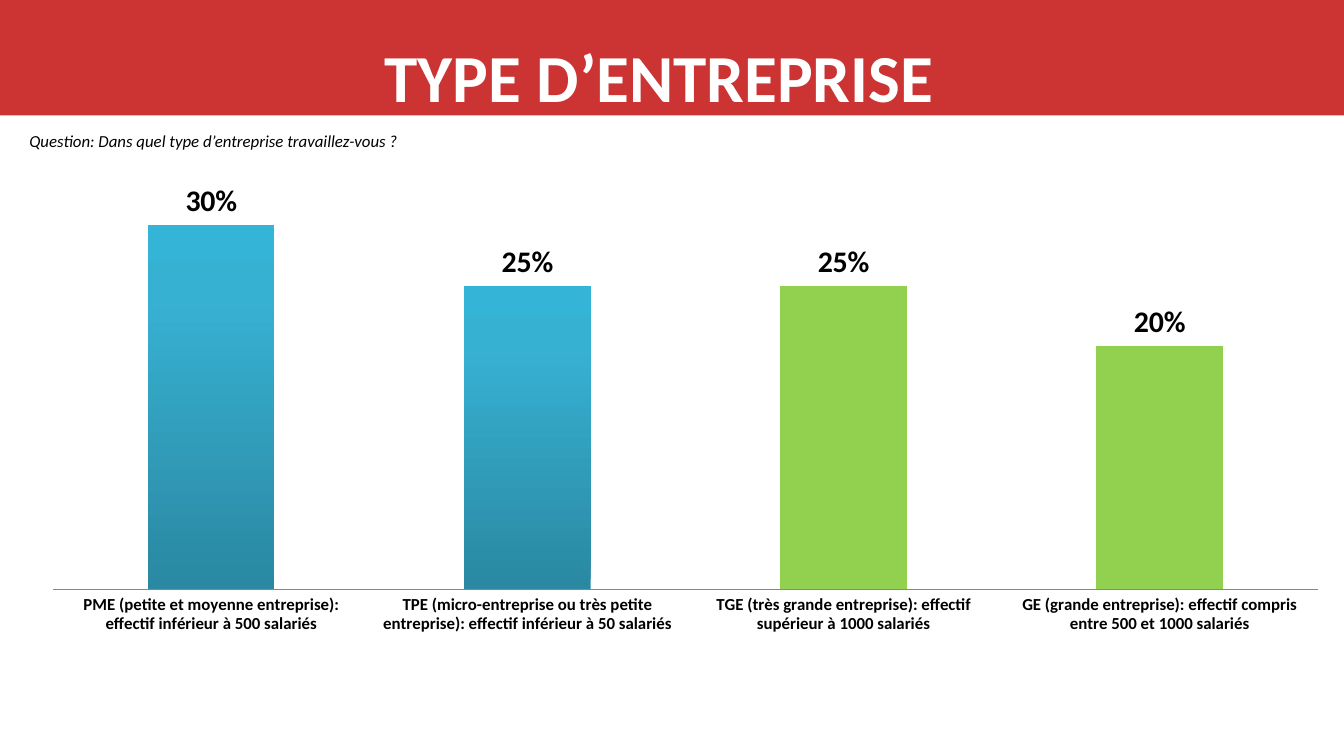
import dataclasses

import pptx
import pptx.chart.data
import pptx.dml.color
import pptx.enum.chart
import pptx.enum.shapes
import pptx.enum.text
import pptx.oxml
import pptx.oxml.ns
import pptx.util


@dataclasses.dataclass(frozen=True)
class Theme:
    """Colours, typeface and type sizes of the slide."""

    font: str = "Calibri"
    band: str = "CC3333"
    light: str = "FFFFFF"
    dark: str = "000000"
    axis: str = "888888"
    large_firm: str = "92D050"
    small_firm: tuple = ((0, "2A88A2"), (80, "37B1D2"), (100, "34B4D6"))
    title_size: float = 36
    chart_size: float = 18
    value_size: float = 16
    note_size: float = 9


def rgb(code):
    """Return a colour object for a hexadecimal code."""
    return pptx.dml.color.RGBColor.from_string(code)


class SurveySlide:
    """Places survey elements on a grid of square cells, ten to the width."""

    columns_across = 10

    def __init__(self, deck, theme):
        """Add a title-only page to the deck."""
        self.theme = theme
        self.cell = deck.slide_width / self.columns_across
        self.page = deck.slides.add_slide(deck.slide_layouts[5])

    def area(self, *cells):
        """Turn left, top, width and height in cells into lengths."""
        return [round(count * self.cell) for count in cells]

    def style(self, font, size, color, bold=False, italic=False):
        """Apply the theme's typeface with the given look."""
        font.name = self.theme.font
        font.size = pptx.util.Pt(size)
        font.color.rgb = rgb(color)
        font.bold, font.italic = bold, italic

    def band(self, *cells):
        """Draw the coloured band behind everything else."""
        band = self.page.shapes.add_shape(
            pptx.enum.shapes.MSO_SHAPE.RECTANGLE, *self.area(*cells))
        band.shadow.inherit = False
        band.fill.solid()
        band.fill.fore_color.rgb = rgb(self.theme.band)
        band.line.fill.background()
        self.page.shapes.element.insert(2, band.element)

    def title(self, text, *cells):
        """Fill and place the title placeholder."""
        box = self.page.shapes.title
        box.left, box.top, box.width, box.height = self.area(*cells)
        frame = box.text_frame
        frame.text = text
        frame.word_wrap = True
        frame.auto_size = pptx.enum.text.MSO_AUTO_SIZE.NONE
        frame.margin_right = pptx.util.Inches(0.21)
        para = frame.paragraphs[0]
        para.alignment = pptx.enum.text.PP_ALIGN.CENTER
        self.style(para.font, self.theme.title_size, self.theme.light, bold=True)

    def note(self, text, *cells):
        """Write a small italic line."""
        frame = self.page.shapes.add_textbox(*self.area(*cells)).text_frame
        frame.text = text
        frame.word_wrap = True
        self.style(frame.paragraphs[0].font, self.theme.note_size,
                   self.theme.dark, italic=True)

    def chart(self, answers, highlighted, *cells):
        """Chart the answers as columns, with some points highlighted."""
        theme = self.theme
        data = pptx.chart.data.CategoryChartData(number_format="0%")
        data.categories = list(answers)
        data.add_series("Series 1", list(answers.values()))
        chart = self.page.shapes.add_chart(
            pptx.enum.chart.XL_CHART_TYPE.COLUMN_CLUSTERED,
            *self.area(*cells), data).chart
        chart.has_legend = chart.has_title = False
        self.style(chart.font, theme.chart_size, theme.dark)
        self.axes(chart)
        plot = chart.plots[0]
        plot.gap_width, plot.overlap = 150, -25
        plot.vary_by_categories = False
        series = plot.series[0]
        self.gradient(series)
        for index in highlighted:
            fill = series.points[index].format.fill
            fill.solid()
            fill.fore_color.rgb = rgb(theme.large_firm)
        labels = series.data_labels
        labels.show_value = True
        labels.number_format, labels.number_format_is_linked = "0%", False
        labels.position = pptx.enum.chart.XL_LABEL_POSITION.OUTSIDE_END
        self.style(labels.font, theme.value_size, theme.dark, bold=True)

    def axes(self, chart):
        """Hide the value axis and format the category axis."""
        values, categories = chart.value_axis, chart.category_axis
        values.minimum_scale, values.maximum_scale = 0, 0.35
        values.has_major_gridlines = values.visible = False
        categories.major_tick_mark = pptx.enum.chart.XL_TICK_MARK.NONE
        categories.format.line.color.rgb = rgb(self.theme.axis)
        categories.format.line.width = pptx.util.Pt(0.75)
        self.style(categories.tick_labels.font, self.theme.note_size,
                   self.theme.dark, bold=True)

    def gradient(self, series):
        """Fill a series with the upward gradient of the theme."""
        stops = "".join(
            f'<a:gs pos="{share * 1000}"><a:srgbClr val="{color}"/></a:gs>'
            for share, color in self.theme.small_firm)
        series.format.fill.background()
        blank = series.format.fill._xPr.find(pptx.oxml.ns.qn("a:noFill"))
        blank.getparent().replace(blank, pptx.oxml.parse_xml(
            f'<a:gradFill {pptx.oxml.ns.nsdecls("a")} rotWithShape="1">'
            f'<a:gsLst>{stops}</a:gsLst>'
            '<a:lin ang="16200000" scaled="0"/></a:gradFill>'))


def main():
    """Build and save the deck."""
    deck = pptx.Presentation()
    deck.slide_width = pptx.util.Inches(10)
    deck.slide_height = deck.slide_width * 9 // 16
    slide = SurveySlide(deck, Theme())
    answers = {
        "PME (petite et moyenne entreprise): effectif inférieur à 500 salariés": 0.3,
        "TPE (micro-entreprise ou très petite entreprise): effectif inférieur à 50 salariés": 0.25,
        "TGE (très grande entreprise): effectif supérieur à 1000 salariés": 0.25,
        "GE (grande entreprise): effectif compris entre 500 et 1000 salariés": 0.2,
    }
    slide.band(0, 0, 10, 0.86)
    slide.title("TYPE D’ENTREPRISE", 1.77, 0.21, 6.38, 0.71)
    slide.chart(answers, (2, 3), 0.2, 1.15, 9.8, 3.64)
    slide.note("Question: Dans quel type d’entreprise travaillez-vous ?",
               0.12, 0.92, 4.88, 0.25)
    deck.save("out.pptx")


if __name__ == "__main__":
    main()
